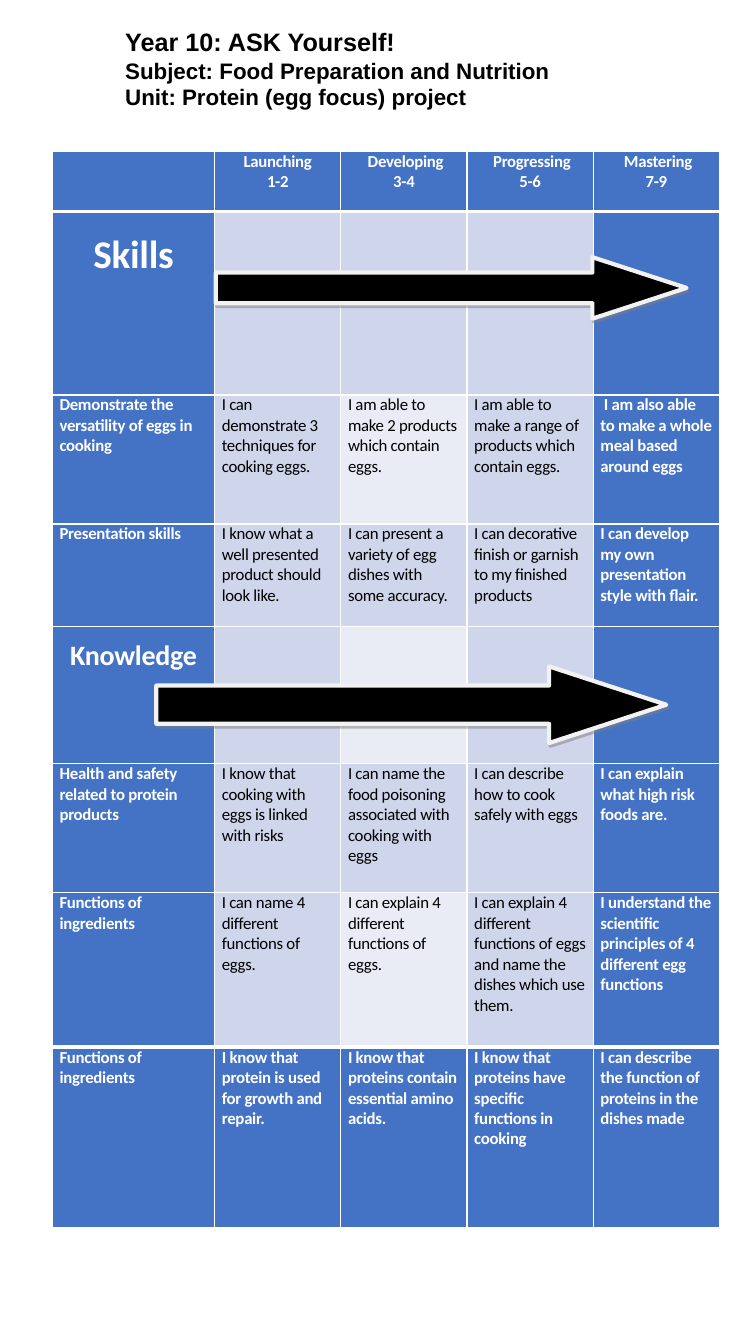
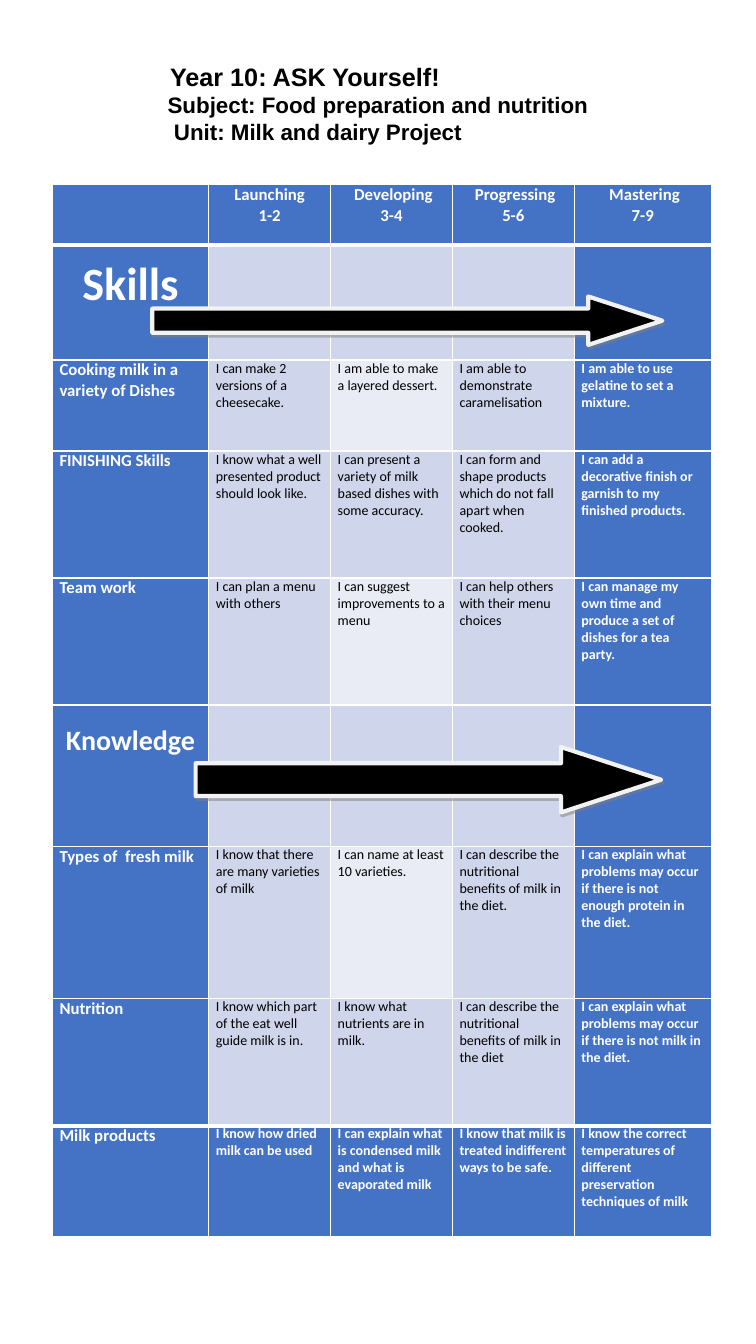
import pptx
import pptx.util
import pptx.dml.color
import pptx.enum.shapes
import pptx.enum.text
import pptx.oxml.ns
import lxml.etree

Cm = pptx.util.Cm
Pt = pptx.util.Pt
RGB = pptx.dml.color.RGBColor.from_string
ALIGN = pptx.enum.text.PP_ALIGN
qn = pptx.oxml.ns.qn

COLORS = {
    "blue": "4472C4",
    "band": "CFD5EA",
    "pale": "E9EBF5",
    "white": "FFFFFF",
    "black": "000000",
    "outline": "F2F2F2",
    "shadow": "7F7F7F",
}
HEADER = ("", "Launching\n1-2", " Developing\n3-4", " Progressing\n5-6", " Mastering\n7-9")

SLIDES = [
    {
        "title": ("Year 10: ASK Yourself!",
                  "Subject: Food Preparation and Nutrition",
                  "Unit: Protein (egg focus) project"),
        "title_box": (2.9, 0.53, 11.35, 2.39),
        "indents": (0, 0, 0),
        "table_top": 3.81,
        "cols": (4.09, 3.18, 3.18, 3.18, 3.18),
        "heights": (1.52, 4.62, 3.25, 2.59, 3.45, 3.25, 3.89, 4.55),
        "body_size": 12,
        "spacing": -20,
        "headings": {"Skills": (28, 0.5), "Knowledge": (20, 0.3)},
        "arrows": [(3.94, 16.79, 12.85, 1.93), (5.44, 6.48, 11.86, 1.55)],
        "rows": [
            ("Skills", "", "", "", ""),
            ("Demonstrate the versatility of eggs in cooking",
             "I can demonstrate 3 techniques for cooking eggs.",
             "I am able to make 2 products which contain eggs.",
             "I am able to make a range of products which contain eggs.",
             " I am also able to make a whole meal based around eggs"),
            ("Presentation skills",
             "I know what a well presented product should look like.",
             "I can present a variety of egg dishes with some accuracy.",
             "I can decorative finish or garnish to my finished products",
             "I can develop my own presentation style with flair."),
            ("Knowledge", "", "", "", ""),
            ("Health and safety related to protein products",
             "I know that cooking with eggs is linked with risks",
             "I can name the food poisoning associated with cooking with eggs",
             "I can describe how to cook safely with eggs",
             "I can explain what high risk foods are."),
            ("Functions of ingredients",
             "I can name 4 different functions of eggs.",
             "I can explain 4 different functions of eggs.",
             "I can explain 4 different functions of eggs and name the dishes which use them.",
             "I understand the scientific principles of 4 different egg functions"),
            ("Functions of ingredients",
             "I know that protein is used for growth and repair.",
             "I know that proteins contain essential amino acids.",
             "I know that proteins have specific functions in cooking",
             "I can describe the function of proteins in the dishes made"),
        ],
    },
    {
        "title": ("Year 10: ASK Yourself!",
                  "Subject: Food preparation and nutrition",
                  "Unit: Milk and dairy Project"),
        "title_box": (3.5, 1.4, 12.04, 2.39),
        "indents": (0.53, 0.47, 0.63),
        "table_top": 4.65,
        "cols": (3.94, 3.07, 3.07, 3.07, 3.45),
        "heights": (1.52, 2.9, 2.29, 3.2, 3.2, 3.56, 3.84, 3.2, 2.79),
        "body_size": 10,
        "spacing": 0,
        "headings": {"Skills": (33, 0.3), "Knowledge": (20, 0.48)},
        "arrows": [(4.93, 18.82, 11.73, 1.65), (3.84, 7.47, 12.85, 1.22)],
        "rows": [
            ("Skills", "", "", "", ""),
            ("Cooking milk in a variety of Dishes",
             "I can make 2 versions of a cheesecake.",
             "I am able to make a layered dessert.",
             "I am able to demonstrate caramelisation",
             "I am able to use gelatine to set a mixture."),
            ("FINISHING Skills",
             "I know what a well presented product should look like.",
             "I can present a variety of milk based dishes with some accuracy.",
             "I can form and shape products which do not fall apart when cooked.",
             "I can add a decorative finish or garnish to my finished products."),
            ("Team work",
             "I can plan a menu with others",
             "I can suggest improvements to a menu",
             "I can help others with their menu choices",
             "I can manage my own time and produce a set of dishes for a tea party."),
            ("Knowledge", "", "", "", ""),
            ("Types of  fresh milk",
             "I know that there are many varieties of milk",
             "I can name at least 10 varieties.",
             "I can describe the nutritional benefits of milk in the diet.",
             "I can explain what problems may occur if there is not enough protein in the diet."),
            ("Nutrition",
             "I know which part of the eat well guide milk is in.",
             "I know what nutrients are in milk.",
             "I can describe the nutritional benefits of milk in the diet",
             "I can explain what problems may occur if there is not milk in the diet."),
            ("Milk products",
             "I know how dried milk can be used",
             "I can explain what is condensed milk and what is evaporated milk",
             "I know that milk is treated indifferent ways to be safe.",
             "I know the correct temperatures of different preservation techniques of milk"),
        ],
    },
]


def set_font(p, name, size, color, bold):
    p.font.name = name
    p.font.size = Pt(size)
    p.font.bold = bold
    p.font.color.rgb = RGB(COLORS[color])


def set_borders(cell, top, bottom):
    tcPr = cell._tc.get_or_add_tcPr()
    for side, width in (("L", 1), ("R", 1), ("T", top), ("B", bottom)):
        ln = lxml.etree.SubElement(tcPr, qn(f"a:ln{side}"), w=str(Pt(width)))
        fill = lxml.etree.SubElement(ln, qn("a:solidFill"))
        lxml.etree.SubElement(fill, qn("a:srgbClr"), val=COLORS["white"])


prs = pptx.Presentation()
prs.slide_width = Cm(19.05)
prs.slide_height = Cm(33.86)

for data in SLIDES:
    s = prs.slides.add_slide(prs.slide_layouts[5])

    title = s.shapes.title
    title.left, title.top, title.width, title.height = map(Cm, data["title_box"])
    tf = title.text_frame
    tf.text = "\n".join(data["title"])
    tf.word_wrap = True
    tf.auto_size = pptx.enum.text.MSO_AUTO_SIZE.NONE
    tf.vertical_anchor = pptx.enum.text.MSO_ANCHOR.MIDDLE
    for p, size, indent in zip(tf.paragraphs, (18, 16, 16), data["indents"]):
        p.alignment = ALIGN.LEFT
        set_font(p, "Arial", size, "black", True)
        p._p.get_or_add_pPr().set("marL", str(Cm(indent)))

    rows = [HEADER] + data["rows"]
    last = len(rows) - 1
    table = s.shapes.add_table(
        len(rows), len(HEADER), Cm(1.32), Cm(data["table_top"]),
        Cm(sum(data["cols"])), Cm(sum(data["heights"]))).table
    table.first_row = False
    table.horz_banding = False
    for column, width in zip(table.columns, data["cols"]):
        column.width = Cm(width)
    for row, height in zip(table.rows, data["heights"]):
        row.height = Cm(height)

    for r, texts in enumerate(rows):
        top = 3 if r in (1, last) else 1
        bottom = 3 if r in (0, last - 1) else 1
        for c, text in enumerate(texts):
            cell = table.cell(r, c)
            set_borders(cell, top, bottom)
            strong = r in (0, last) or c in (0, 4)
            fill = "blue" if strong else "pale" if c == 2 and r % 2 == 0 else "band"
            cell.fill.solid()
            cell.fill.fore_color.rgb = RGB(COLORS[fill])
            size = 12 if r == 0 or c == 0 else data["body_size"]
            size, margin = data["headings"].get(text, (size, 0))
            cell.margin_left = cell.margin_right = Cm(0.18)
            cell.margin_top, cell.margin_bottom = Cm(margin), 0
            if not text:
                continue
            cell.text_frame.text = text
            for p in cell.text_frame.paragraphs:
                centred = r == 0 or text in data["headings"]
                p.alignment = ALIGN.CENTER if centred else ALIGN.LEFT
                set_font(p, "Calibri", size, "white" if strong else "black", strong)
                p.runs[0]._r.get_or_add_rPr().set("spc", str(data["spacing"]))

    for box in data["arrows"]:
        sp = s.shapes.add_shape(pptx.enum.shapes.MSO_SHAPE.RIGHT_ARROW, *map(Cm, box))
        sp.adjustments[0] = 0.5
        sp.adjustments[1] = 1.53
        sp.fill.solid()
        sp.fill.fore_color.rgb = RGB(COLORS["black"])
        sp.line.color.rgb = RGB(COLORS["outline"])
        sp.line.width = Pt(3)
        sp.shadow.inherit = False
        effects = sp.element.spPr.find(qn("a:effectLst"))
        shadow = lxml.etree.SubElement(
            effects, qn("a:outerShdw"), dist=str(Pt(2.2)), dir=str(63 * 60000),
            algn="ctr", rotWithShape="0")
        color = lxml.etree.SubElement(shadow, qn("a:srgbClr"), val=COLORS["shadow"])
        lxml.etree.SubElement(color, qn("a:alpha"), val="50000")

prs.save("out.pptx")
